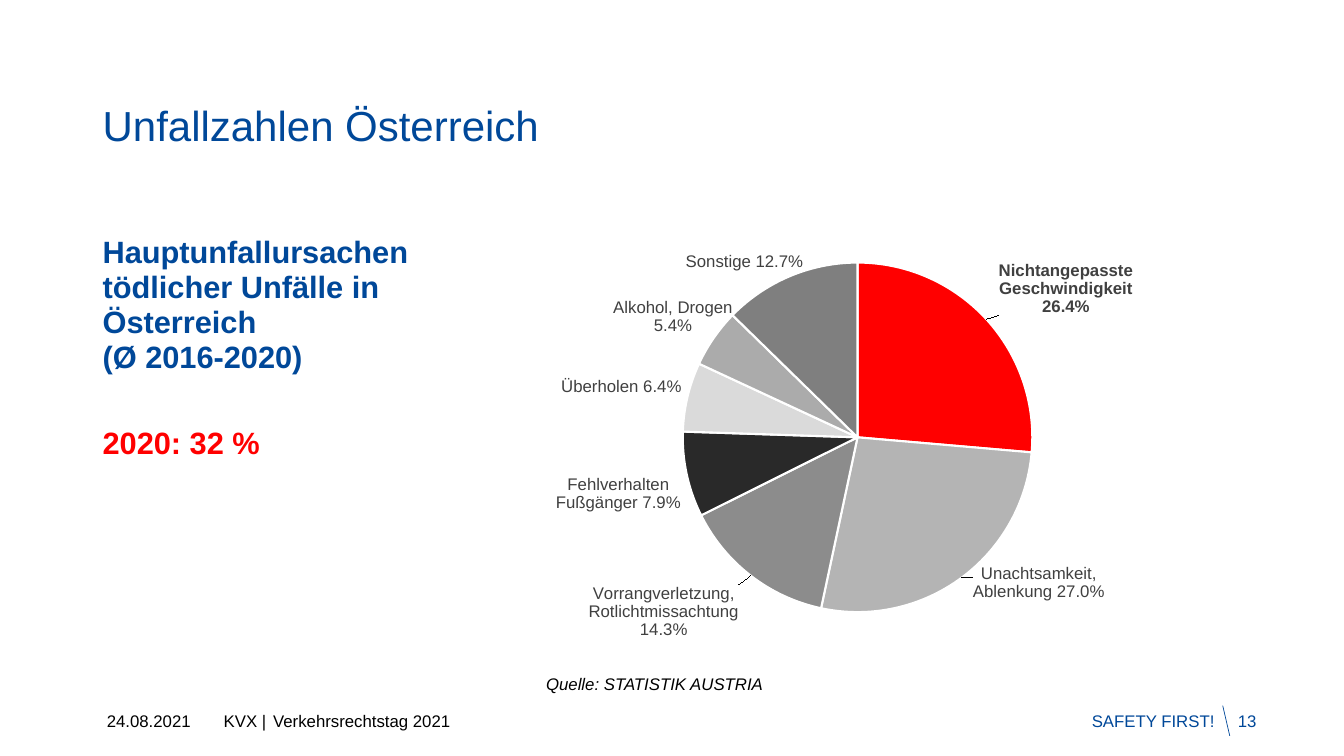
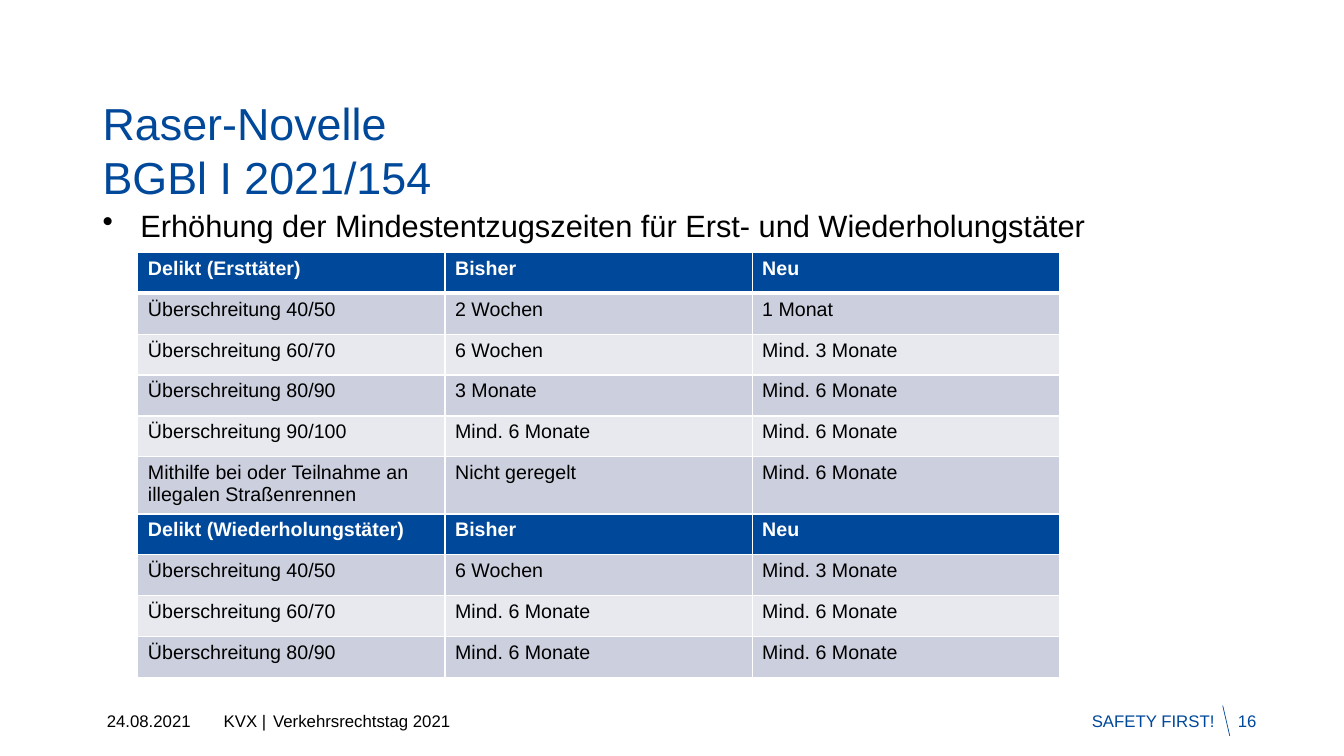
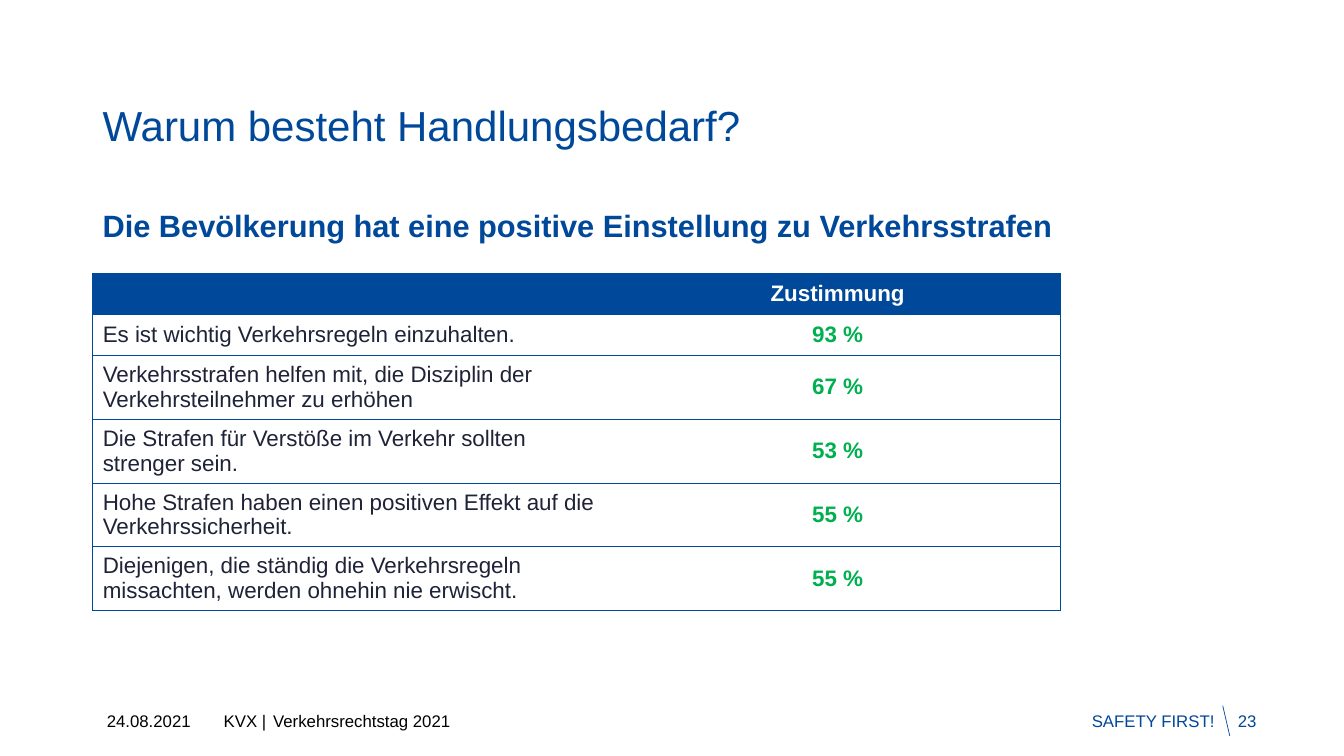
from copy import deepcopy

from lxml import etree
from pptx import Presentation
from pptx.chart.data import CategoryChartData
from pptx.dml.color import RGBColor
from pptx.enum.chart import XL_CHART_TYPE, XL_LABEL_POSITION
from pptx.enum.shapes import MSO_CONNECTOR
from pptx.enum.text import MSO_ANCHOR, PP_ALIGN
from pptx.oxml import parse_xml
from pptx.oxml.ns import nsdecls, qn
from pptx.util import Pt

PIE = XL_CHART_TYPE.PIE
BEST = XL_LABEL_POSITION.BEST_FIT
STRAIGHT = MSO_CONNECTOR.STRAIGHT
TOP, MIDDLE = MSO_ANCHOR.TOP, MSO_ANCHOR.MIDDLE
LEFT, CENTER, RIGHT = PP_ALIGN.LEFT, PP_ALIGN.CENTER, PP_ALIGN.RIGHT

FONT = "Arial"
PLAIN = "{2D5ABB26-0587-4C30-8999-92F81FD0307C}"
HUES = {
    "blue": "004899", "black": "000000", "white": "FFFFFF", "red": "FF0000",
    "green": "00B050", "ink": "1E2337", "label": "404040",
    "band": "CCCFDE", "pale": "E7E9EF",
}
EDGE = 66.24
FOOT = 504
ROW = 29.2
LEAD = 25
AFTER = 5.7

CAUSES = [
    ("Nichtangepasste Geschwindigkeit", 0.264, "FF0000"),
    ("Unachtsamkeit, Ablenkung", 0.27, "B4B4B4"),
    ("Vorrangverletzung, Rotlichtmissachtung", 0.143, "8C8C8C"),
    ("Fehlverhalten Fußgänger", 0.079, "292929"),
    ("Überholen", 0.064, "DADADA"),
    ("Alkohol, Drogen", 0.054, "ABABAB"),
    ("Sonstige", 0.127, "7F7F7F"),
]
SHIFTS = {
    0: (0.01, 0, "\n"),
    1: (0.01, -0.04, " "),
    2: (-0.01, 0.01, "\n"),
    5: (0.03, 0, "\n"),
    6: (0.02, 0, " "),
}
TERMS = [
    ("Delikt (Ersttäter)", "Bisher", "Neu"),
    ("Überschreitung 40/50", "2 Wochen", "1 Monat"),
    ("Überschreitung 60/70", "6 Wochen", "Mind. 3 Monate"),
    ("Überschreitung 80/90", "3 Monate", "Mind. 6 Monate"),
    ("Überschreitung 90/100", "Mind. 6 Monate", "Mind. 6 Monate"),
    ("Mithilfe bei oder Teilnahme an illegalen Straßenrennen",
     "Nicht geregelt", "Mind. 6 Monate"),
    ("Delikt (Wiederholungstäter)", "Bisher", "Neu"),
    ("Überschreitung 40/50", "6 Wochen", "Mind. 3 Monate"),
    ("Überschreitung 60/70", "Mind. 6 Monate", "Mind. 6 Monate"),
    ("Überschreitung 80/90", "Mind. 6 Monate", "Mind. 6 Monate"),
]
VIEWS = [
    ("", "Zustimmung"),
    ("Es ist wichtig Verkehrsregeln einzuhalten.", "93 %"),
    ("Verkehrsstrafen helfen mit, die Disziplin der "
     "Verkehrsteilnehmer zu erhöhen", "67 %"),
    ("Die Strafen für Verstöße im Verkehr sollten strenger sein.", "53 %"),
    ("Hohe Strafen haben einen positiven Effekt auf die "
     "Verkehrssicherheit.", "55 %"),
    ("Diejenigen, die ständig die Verkehrsregeln missachten, "
     "werden ohnehin nie erwischt.", "55 %"),
]


def tint(name):
    """Return the colour stored under a name."""
    return RGBColor.from_string(HUES[name])


def style(font, size, hue, bold=False, slant=False):
    """Set the look of a font."""
    font.name, font.size = FONT, Pt(size)
    font.bold, font.italic = bold, slant
    font.color.rgb = tint(hue)


def write(para, words, size, hue, bold=False, slant=False, align=LEFT):
    """Add the lines of a paragraph as runs."""
    para.alignment = align
    for spot, line in enumerate(words.split("\n")):
        if spot:
            para.add_line_break()
        run = para.add_run()
        run.text = line
        style(run.font, size, hue, bold, slant)


def frame(slide, box, side=7.2, anchor=TOP):
    """Add a wrapping text box and return its text frame."""
    text = slide.shapes.add_textbox(*map(Pt, box)).text_frame
    text.word_wrap = True
    text.vertical_anchor = anchor
    text.margin_left = text.margin_right = Pt(side)
    return text


def title(slide, words, size=30):
    """Add the slide title."""
    para = frame(slide, (EDGE, 65.5, 828, 80)).paragraphs[0]
    para.line_spacing = Pt(38)
    write(para, words, size, "blue")


def footer(slide, page):
    """Add the footer line with its page number."""
    parts = [
        (76.3, 86.4, "24.08.2021", "black", LEFT),
        (159.8, 73.4, "KVX |", "black", LEFT),
        (195.1, 324, "Verkehrsrechtstag 2021", "black", LEFT),
        (736.6, 131, "SAFETY FIRST!", "blue", RIGHT),
        (884.2, 75.6, str(page), "blue", LEFT),
    ]
    for left, width, words, hue, align in parts:
        text = frame(slide, (left, FOOT, width, 21.6), 0, MIDDLE)
        write(text.paragraphs[0], words, 12, hue, align=align)
    ends = (873.4, FOOT, 878.4, FOOT + 21.6)
    slash = slide.shapes.add_connector(STRAIGHT, *map(Pt, ends))
    slash.line.color.rgb = tint("blue")
    slash.line.width = Pt(0.5)
    etree.SubElement(slash._element.spPr, qn("a:effectLst"))


def body(slide, box, items, bullet=False):
    """Add body paragraphs of words, hue, weight and space before."""
    text = frame(slide, box)
    for spot, (words, hue, bold, before) in enumerate(items):
        para = text.add_paragraph() if spot else text.paragraphs[0]
        if bullet:
            props = para._p.get_or_add_pPr()
            props.set("marL", str(Pt(27)))
            props.set("indent", str(Pt(-27)))
            etree.SubElement(props, qn("a:buChar")).set("char", "•")
        para.line_spacing, para.space_after = Pt(LEAD), Pt(AFTER)
        if before:
            para.space_before = Pt(before)
        write(para, words, 22, hue, bold)


def tags(series):
    """Label the slices and shift some of the labels."""
    labels = series.data_labels
    labels.show_value = labels.show_category_name = True
    labels.number_format = "0.0%"
    labels.number_format_is_linked = False
    labels.position = BEST
    style(labels.font, 12, "label")
    root = labels._element
    gap = etree.Element(qn("c:separator"))
    gap.text = " "
    root.find(qn("c:showBubbleSize")).addnext(gap)
    parts = [part for part in root if part.tag != qn("c:showLeaderLines")]
    for spot, (point, (across, down, mark)) in enumerate(SHIFTS.items()):
        label = parse_xml(
            f'<c:dLbl {nsdecls("c")}><c:idx val="{point}"/><c:layout>'
            f'<c:manualLayout><c:x val="{across}"/><c:y val="{down}"/>'
            '</c:manualLayout></c:layout></c:dLbl>')
        label.extend(deepcopy(part) for part in parts)
        label.find(qn("c:separator")).text = mark
        if point == 0:
            label.find(".//" + qn("a:defRPr")).set("b", "1")
        root.insert(spot, label)


def pie(slide, box):
    """Add the pie chart of accident causes."""
    data = CategoryChartData(number_format="0.0%")
    data.categories = [cause[0] for cause in CAUSES]
    data.add_series("Series 1", [cause[1] for cause in CAUSES])
    chart = slide.shapes.add_chart(PIE, *map(Pt, box), data).chart
    chart.has_legend = chart.has_title = False
    style(chart.font, 10, "black")
    plot = chart.plots[0]
    plot.vary_by_categories = True
    series = plot.series[0]
    for spot, cause in enumerate(CAUSES):
        form = series.points[spot].format
        form.fill.solid()
        form.fill.fore_color.rgb = RGBColor.from_string(cause[2])
        form.line.color.rgb = tint("white")
        form.line.width = Pt(1.5)
    tags(series)
    area = chart._chartSpace.chart.plotArea
    for old in area.findall(qn("c:layout")):
        area.remove(old)
    sizes = {"x": 0.29, "y": 0.09, "w": 0.44, "h": 0.79}
    rules = "".join(f'<c:{k} val="{v}"/>' for k, v in sizes.items())
    area.insert(0, parse_xml(
        f'<c:layout {nsdecls("c")}><c:manualLayout>'
        '<c:layoutTarget val="inner"/><c:xMode val="edge"/>'
        f'<c:yMode val="edge"/>{rules}</c:manualLayout></c:layout>'))


def grid(slide, left, top, widths, count):
    """Add an unstyled table with even rows."""
    box = (left, top, sum(widths), count * ROW)
    table = slide.shapes.add_table(
        count, len(widths), *map(Pt, box)).table
    table._tbl.tblPr.find(qn("a:tableStyleId")).text = PLAIN
    for col, width in zip(table.columns, widths):
        col.width = Pt(width)
    for row in table.rows:
        row.height = Pt(ROW)
    return table


def cover(cell, fill, hue, sides):
    """Draw the borders of a cell, then its fill."""
    props = cell._tc.get_or_add_tcPr()
    for side in "LRTB":
        if side in sides:
            props.append(parse_xml(
                f'<a:ln{side} {nsdecls("a")} w="{Pt(sides[side])}">'
                f'<a:solidFill><a:srgbClr val="{HUES[hue]}"/>'
                f'</a:solidFill></a:ln{side}>'))
    if fill:
        cell.fill.solid()
        cell.fill.fore_color.rgb = tint(fill)
    else:
        cell.fill.background()


def terms(slide, left, top):
    """Add the table of licence withdrawal terms."""
    table = grid(slide, left, top, [219.4] * 3, len(TERMS))
    band = 0
    for i, row in enumerate(TERMS):
        head = row[0].startswith("Delikt")
        band = 0 if head else band + 1
        fill = "blue" if head else ("pale", "band")[band % 2]
        sides = dict.fromkeys("LRTB", 1)
        if i == 0:
            sides["B"] = 3
        elif i == 1:
            sides["T"] = 3
        for j, words in enumerate(row):
            cell = table.cell(i, j)
            hue = "white" if head else "black"
            write(cell.text_frame.paragraphs[0], words, 14, hue, head)
            cover(cell, fill, "white", sides)


def views(slide, left, top):
    """Add the table of approval rates."""
    table = grid(slide, left, top, [373, 318.2], len(VIEWS))
    for i, row in enumerate(VIEWS):
        looks = [("ink", False, LEFT),
                 ("green" if i else "white", True, CENTER)]
        for j, (words, (hue, bold, align)) in enumerate(zip(row, looks)):
            cell = table.cell(i, j)
            cell.vertical_anchor = MIDDLE
            if words:
                write(cell.text_frame.paragraphs[0], words, 16, hue, bold,
                      align=align)
            sides = dict.fromkeys("TB" + "LR"[j], 0.5)
            cover(cell, None if i else "blue", "blue", sides)


def causes(slide):
    """Build the slide on accident causes."""
    title(slide, "Unfallzahlen Österreich")
    text = frame(slide, (383, 478, 560, 21.8))
    write(text.paragraphs[0], "Quelle: STATISTIK AUSTRIA", 12, "black",
          slant=True)
    pie(slide, (321.8, 159.1, 570.2, 316.1))
    body(slide, (EDGE, 164.2, 316.8, 319), [
        ("Hauptunfallursachen tödlicher Unfälle in Österreich\n"
         "(Ø 2016-2020)", "blue", True, 0),
        ("2020: 32 %", "red", True, LEAD + AFTER),
    ])


def reform(slide):
    """Build the slide on the new withdrawal terms."""
    title(slide, "Raser-Novelle\nBGBl I 2021/154", 32)
    body(slide, (EDGE, 145.4, 828, 338), [
        ("Erhöhung der Mindestentzugszeiten für Erst- und "
         "Wiederholungstäter", "black", False, 0)], True)
    terms(slide, 98.5, 180.3)


def survey(slide):
    """Build the slide on public opinion."""
    title(slide, "Warum besteht Handlungsbedarf?")
    body(slide, (EDGE, 145.4, 828, 319), [
        ("Die Bevölkerung hat eine positive Einstellung zu "
         "Verkehrsstrafen", "blue", True, 0)])
    views(slide, EDGE, 195.3)


def main():
    """Build and save the deck."""
    deck = Presentation()
    deck.slide_width, deck.slide_height = Pt(960), Pt(540)
    for build, page in ((causes, 13), (reform, 16), (survey, 23)):
        slide = deck.slides.add_slide(deck.slide_layouts[6])
        build(slide)
        footer(slide, page)
    deck.save("out.pptx")


if __name__ == "__main__":
    main()
